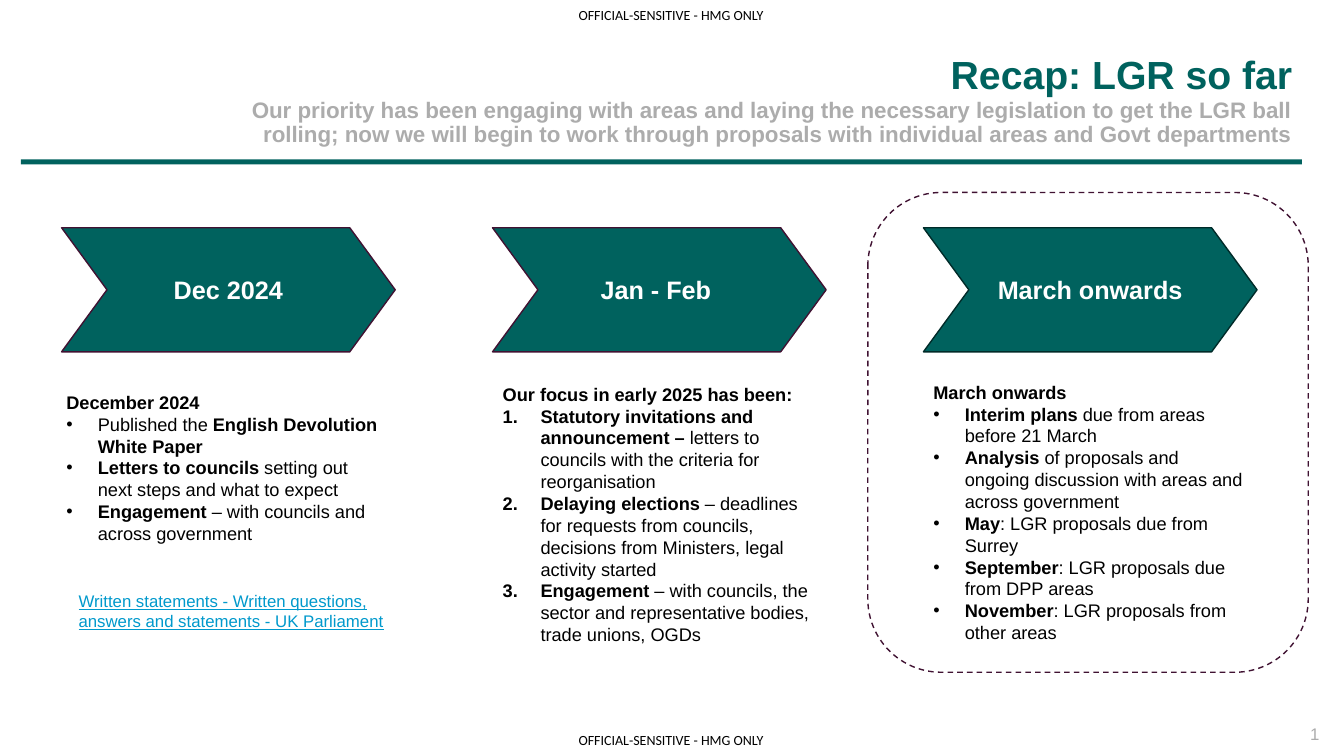
from dataclasses import dataclass

from pptx import Presentation
from pptx import util as u
from pptx.dml.color import RGBColor
from pptx.enum import dml, shapes, text as t
from pptx.oxml.ns import qn
from lxml import etree


@dataclass(frozen=True)
class Theme:
    """Colours, fonts and type sizes of the slide."""
    green: str = "00625E"
    dark_green: str = "002B29"
    plum: str = "401232"
    grey: str = "ACACAC"
    black: str = "000000"
    white: str = "FFFFFF"
    link: str = "0099CC"
    font: str = "Arial"
    marking_font: str = "Calibri"
    title: float = 28
    stage: float = 18
    subtitle: float = 16
    body: float = 13
    small: float = 12
    marking: float = 10


THEME = Theme()
MARKING = "OFFICIAL-SENSITIVE - HMG ONLY"
SUBTITLE = ("Our priority has been engaging with areas and laying the necessary legislation to get "
            "the LGR ball rolling; now we will begin to work through proposals with individual areas "
            "and Govt departments")
STAGES = [
    dict(label="Dec 2024", outline=THEME.plum, box=(40.3, 275.8, 242, 117), marker="•", indent=22.5,
         heading="December 2024",
         points=["Published the **English Devolution White Paper**",
                 "**Letters to councils **setting out next steps and what to expect",
                 "**Engagement** – with councils and across government"]),
    dict(label="Jan - Feb ", outline=THEME.plum, box=(352, 270, 238.3, 196.6), marker="1.", indent=27,
         heading="Our focus in early 2025 has been:",
         points=["**Statutory invitations and announcement – **letters to councils with the criteria "
                 "for reorganisation",
                 "**Delaying elections **– deadlines for requests from councils, decisions from "
                 "Ministers, legal activity started",
                 "**Engagement** – with councils, the sector and representative bodies, trade unions, "
                 "OGDs"]),
    dict(label="March onwards", outline=THEME.dark_green, box=(659.6, 268.6, 238.3, 196.6), marker="•",
         indent=22.5, heading="March onwards",
         points=["**Interim plans **due from areas before 21 March",
                 "**Analysis** of proposals and ongoing discussion with areas and across government",
                 "**May**: LGR proposals due from Surrey",
                 "**September**: LGR proposals due from DPP areas",
                 "**November**: LGR proposals from other areas"]),
]


def set_marker(paragraph, marker, indent):
    """Give a paragraph a hanging bullet or number."""
    properties = paragraph._p.get_or_add_pPr()
    properties.set("marL", str(u.Pt(indent)))
    properties.set("indent", str(-u.Pt(indent)))
    if marker == "•":
        etree.SubElement(properties, qn("a:buFont"), typeface=THEME.font)
        etree.SubElement(properties, qn("a:buChar"), char=marker)
    else:
        etree.SubElement(properties, qn("a:buFont"), typeface="+mj-lt")
        etree.SubElement(properties, qn("a:buAutoNum"), type="arabicPeriod")


def write(paragraph, text, *, size, color=THEME.black, font=THEME.font, bold=False,
          underline=False, align=t.PP_ALIGN.LEFT, spacing=None, marker=None, indent=0):
    """Fill a paragraph, switching bold at each double asterisk."""
    if marker:
        set_marker(paragraph, marker, indent)
    paragraph.alignment = align
    if spacing:
        paragraph.line_spacing = spacing
    for index, part in enumerate(text.split("**")):
        if part:
            run = paragraph.add_run()
            run.text = part
            run.font.size = u.Pt(size)
            run.font.name = font
            run.font.bold = bold != (index % 2 == 1)
            run.font.underline = underline
            run.font.color.rgb = RGBColor.from_string(color)


def add_box(slide, box, *, inset=True, wrap=True, anchor=t.MSO_ANCHOR.TOP):
    """Add an empty text box and return its text frame."""
    frame = slide.shapes.add_textbox(*map(u.Pt, box)).text_frame
    frame.word_wrap = wrap
    frame.vertical_anchor = anchor
    if not inset:
        frame.margin_left = frame.margin_right = frame.margin_top = frame.margin_bottom = 0
    return frame


def add_shape(slide, kind, box, *, fill=None, outline=None, dash=None):
    """Add a preset shape without a shadow."""
    shape = slide.shapes.add_shape(kind, *map(u.Pt, box))
    shape.shadow.inherit = False
    if fill:
        shape.fill.solid()
        shape.fill.fore_color.rgb = RGBColor.from_string(fill)
    else:
        shape.fill.background()
    if outline:
        shape.line.color.rgb = RGBColor.from_string(outline)
        shape.line.width = u.Pt(1)
        if dash:
            shape.line.dash_style = dash
    else:
        shape.line.fill.background()
    return shape


def add_header(slide):
    """Add the markings, rule, page number, subtitle and title."""
    right = t.PP_ALIGN.RIGHT
    for top in (5, 522.7):
        frame = add_box(slide, (413.3, top, 135.4, 12.2), inset=False, wrap=False)
        write(frame.paragraphs[0], MARKING, size=THEME.marking, font=THEME.marking_font)
    add_shape(slide, shapes.MSO_SHAPE.RECTANGLE, (15, 113.8, 915, 3.6), fill=THEME.green)
    frame = add_box(slide, (897.8, 517, 44.6, 14.4), inset=False, anchor=t.MSO_ANCHOR.MIDDLE)
    write(frame.paragraphs[0], "1", size=THEME.small, color=THEME.grey, align=right)
    frame = add_box(slide, (175.7, 70.6, 747.3, 36.7), inset=False)
    write(frame.paragraphs[0], SUBTITLE, size=THEME.subtitle, color=THEME.grey, bold=True,
          align=right, spacing=0.9)
    frame = add_box(slide, (324, 39.6, 599, 30.2), inset=False, anchor=t.MSO_ANCHOR.BOTTOM)
    write(frame.paragraphs[0], "Recap: LGR so far", size=THEME.title, color=THEME.green, bold=True,
          align=right, spacing=0.9)


def add_stage(slide, left, *, label, outline, box, marker, indent, heading, points):
    """Add a chevron and the list of points below it."""
    chevron = add_shape(slide, shapes.MSO_SHAPE.CHEVRON, (left, 162.7, 238.3, 88.6),
                        fill=THEME.green, outline=outline)
    chevron.adjustments[0] = 0.366
    chevron.text_frame.vertical_anchor = t.MSO_ANCHOR.MIDDLE
    write(chevron.text_frame.paragraphs[0], label, size=THEME.stage, color=THEME.white, bold=True,
          align=t.PP_ALIGN.CENTER)
    frame = add_box(slide, box)
    write(frame.paragraphs[0], heading, size=THEME.body, bold=True)
    for point in points:
        write(frame.add_paragraph(), point, size=THEME.body, marker=marker, indent=indent)


def main():
    """Build the slide and save it."""
    presentation = Presentation()
    presentation.slide_width, presentation.slide_height = u.Pt(960), u.Pt(540)
    slide = presentation.slides.add_slide(presentation.slide_layouts[6])
    add_header(slide)
    for index, stage in enumerate(STAGES):
        add_stage(slide, 44 + 307.8 * index, **stage)
    add_shape(slide, shapes.MSO_SHAPE.ROUNDED_RECTANGLE, (619.9, 137.5, 314.6, 342.7),
              outline=THEME.plum, dash=dml.MSO_LINE.DASH)
    frame = add_box(slide, (49, 418.3, 254, 36))
    write(frame.paragraphs[0],
          "Written statements - Written questions, answers and statements - UK Parliament",
          size=THEME.small, color=THEME.link, underline=True)
    presentation.save("out.pptx")


if __name__ == "__main__":
    main()
